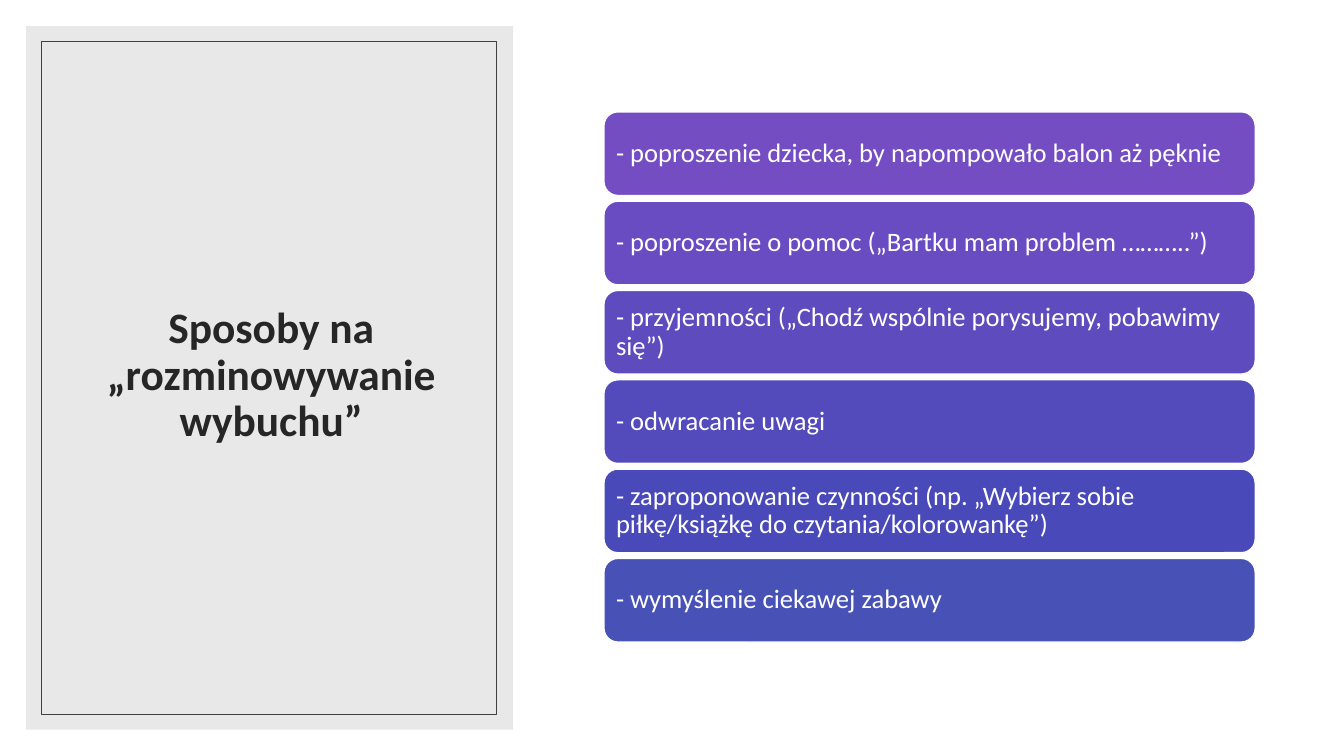
from dataclasses import dataclass

from lxml.etree import SubElement
from pptx import Presentation
from pptx.dml.color import RGBColor
from pptx.enum.shapes import MSO_SHAPE
from pptx.enum.text import MSO_ANCHOR, MSO_AUTO_SIZE, PP_ALIGN
from pptx.oxml.ns import qn
from pptx.util import Inches, Pt

# Content: each way with the colour of its bar
HEADING = "Sposoby na „rozminowywanie wybuchu”"
WAYS = [
    ("- poproszenie dziecka, by napompowało balon aż pęknie", "744DC3"),
    ("- poproszenie o pomoc („Bartku mam problem ………..”)", "694CC1"),
    ("- przyjemności („Chodź wspólnie porysujemy, pobawimy się”)", "5E4BBE"),
    ("- odwracanie uwagi", "534ABC"),
    ("- zaproponowanie czynności (np. „Wybierz sobie "
     "piłkę/książkę do czytania/kolorowankę”)", "4949B9"),
    ("- wymyślenie ciekawej zabawy", "4851B6"),
]


@dataclass(frozen=True)
class Theme:
    font: str = "Calibri"
    heading_size: float = 31
    way_size: float = 19
    white: str = "FFFFFF"
    panel: str = "D9D9D9"
    panel_opacity: int = 60
    frame: str = "404040"
    heading: str = "262626"


THEME = Theme()

# Layout in inches: left, top, width, height
PANEL = (0.26, 0.26, 4.83, 6.98)
HEADING_BOX = (0.63, 0.61, 4.12, 6.24)
FRAME = (0.41, 0.41, 4.51, 6.68)
BAR_LEFT, BAR_TOP, BAR_WIDTH, BAR_HEIGHT = 5.99, 1.11, 6.46, 0.83
BAR_GAP = 0.056
BAR_INSET = 0.08


def rgb(code):
    return RGBColor.from_string(code)


def add_box(slide, kind, box, fill=None, line=None, line_width=1):
    shape = slide.shapes.add_shape(kind, *map(Inches, box))
    shape.shadow.inherit = False
    if fill:
        shape.fill.solid()
        shape.fill.fore_color.rgb = rgb(fill)
    else:
        shape.fill.background()
    if line:
        shape.line.color.rgb = rgb(line)
        shape.line.width = Pt(line_width)
    else:
        shape.line.fill.background()
    return shape


def write(shape, text, size, color, align, bold=False):
    frame = shape.text_frame
    frame.text = text
    frame.word_wrap = True
    frame.auto_size = MSO_AUTO_SIZE.NONE
    frame.vertical_anchor = MSO_ANCHOR.MIDDLE
    paragraph = frame.paragraphs[0]
    paragraph.alignment = align
    paragraph.line_spacing = 0.9
    paragraph.font.name = THEME.font
    paragraph.font.size = Pt(size)
    paragraph.font.bold = bold
    paragraph.font.color.rgb = rgb(color)
    return frame


def add_heading(slide):
    # Translucent panel
    panel = add_box(slide, MSO_SHAPE.RECTANGLE, PANEL, THEME.panel)
    color = panel.fill._xPr.find(".//" + qn("a:srgbClr"))
    SubElement(color, qn("a:alpha"), val=str(THEME.panel_opacity * 1000))

    # Title, brought in front of the panel
    heading = slide.shapes.title
    heading.left, heading.top, heading.width, heading.height = map(Inches, HEADING_BOX)
    write(heading, HEADING, THEME.heading_size, THEME.heading, PP_ALIGN.CENTER, True)
    panel._element.addnext(heading._element)

    # Thin frame
    add_box(slide, MSO_SHAPE.RECTANGLE, FRAME, line=THEME.frame, line_width=0.5)


def add_ways(slide):
    for row, (way, color) in enumerate(WAYS):
        top = BAR_TOP + row * (BAR_HEIGHT + BAR_GAP)
        bar = add_box(slide, MSO_SHAPE.ROUNDED_RECTANGLE,
                      (BAR_LEFT, top, BAR_WIDTH, BAR_HEIGHT), color, THEME.white)
        frame = write(bar, way, THEME.way_size, THEME.white, PP_ALIGN.LEFT)
        frame.margin_left = frame.margin_right = Inches(BAR_INSET)
        frame.margin_top = frame.margin_bottom = Inches(BAR_INSET)


def main():
    deck = Presentation()
    deck.slide_width, deck.slide_height = Inches(13.33), Inches(7.5)
    slide = deck.slides.add_slide(deck.slide_layouts.get_by_name("Title Only"))
    slide.background.fill.solid()
    slide.background.fill.fore_color.rgb = rgb(THEME.white)
    add_heading(slide)
    add_ways(slide)
    deck.save("out.pptx")


if __name__ == "__main__":
    main()
